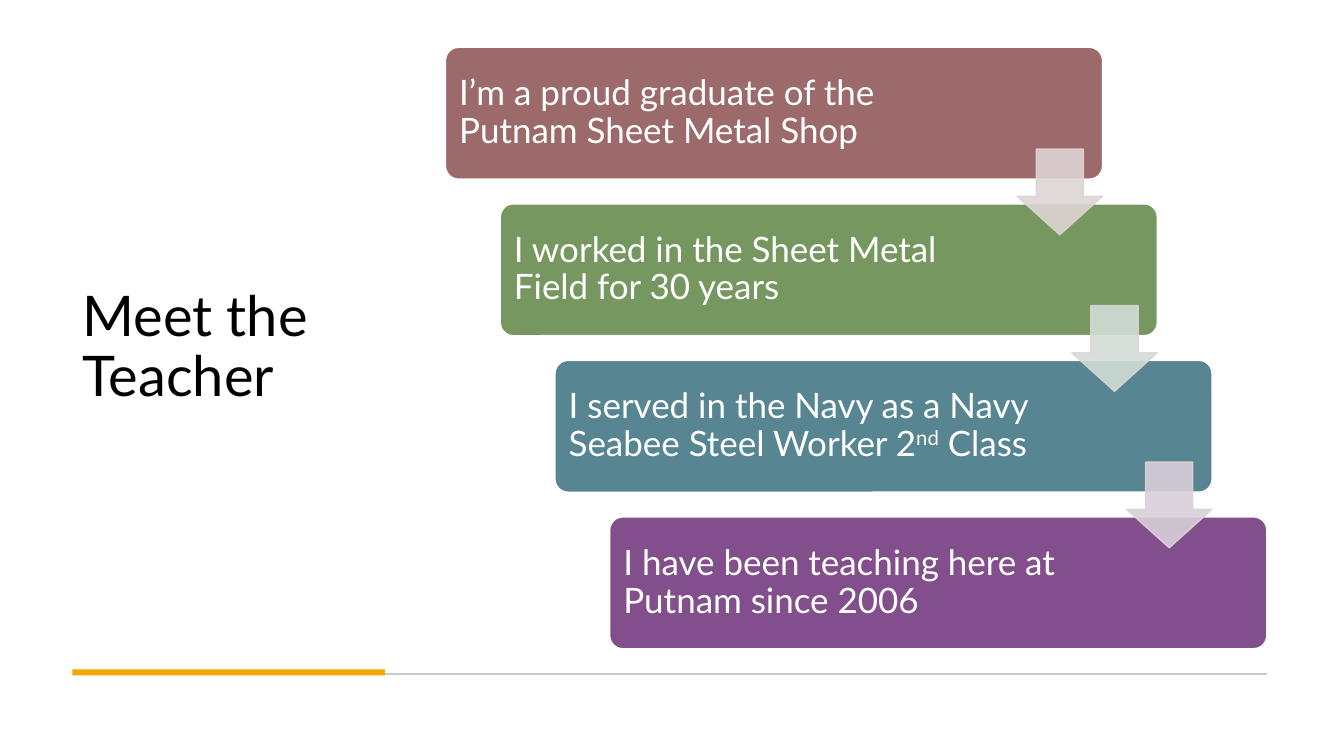
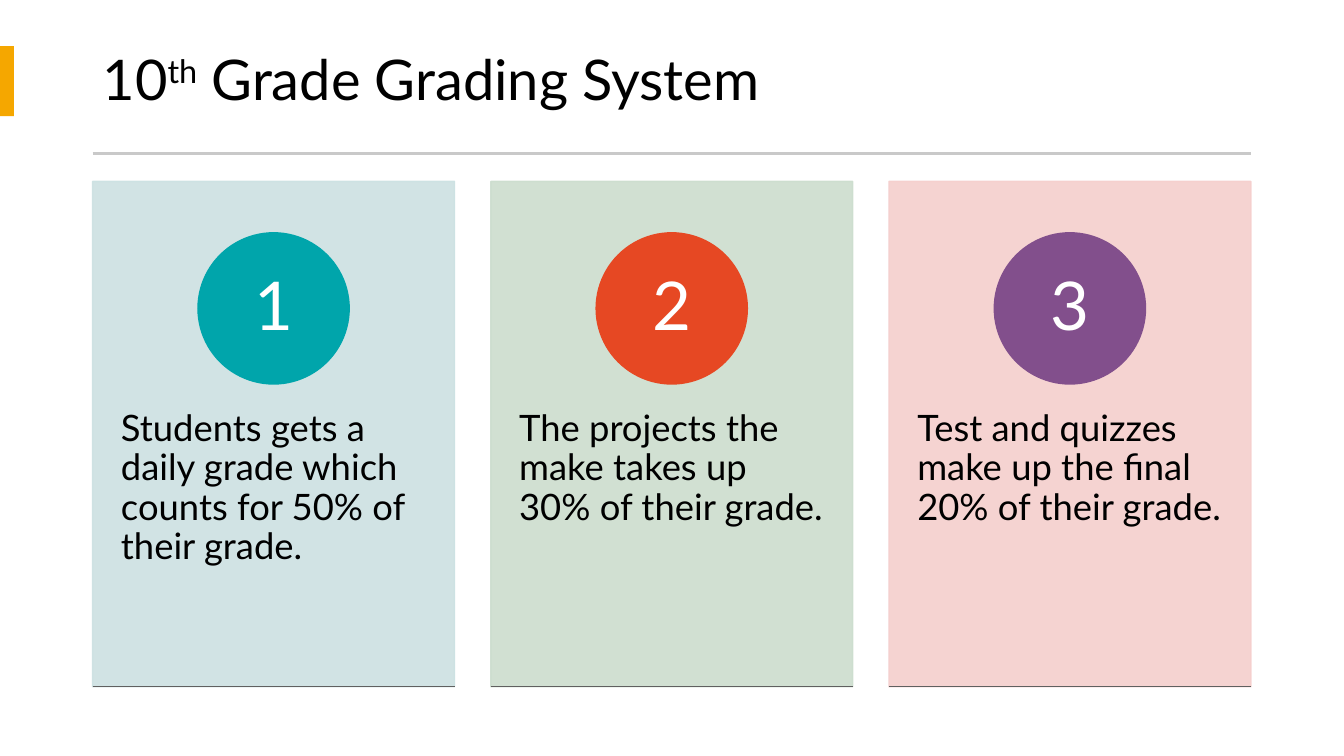
from lxml.etree import SubElement
from pptx import Presentation
from pptx.dml.color import RGBColor
from pptx.enum.shapes import MSO_CONNECTOR as Link, MSO_SHAPE as Kind
from pptx.enum.text import MSO_ANCHOR as Anchor, MSO_AUTO_SIZE as Fit, PP_ALIGN as Align
from pptx.oxml.ns import qn
from pptx.util import Pt

# Shared style
FONT = "Lato"
BLACK = RGBColor(0x00, 0x00, 0x00)
WHITE = RGBColor(0xFF, 0xFF, 0xFF)
GOLD = RGBColor(0xF5, 0xA7, 0x00)
GREY = RGBColor(0xC9, 0xC9, 0xC9)
DARK = RGBColor(0x60, 0x60, 0x60)
ROSE = RGBColor(0x9C, 0x6A, 0x6A)
GREEN = RGBColor(0x76, 0x98, 0x60)
STEEL = RGBColor(0x57, 0x85, 0x92)
PLUM = RGBColor(0x82, 0x4F, 0x8C)
TEAL = RGBColor(0x00, 0xA5, 0xAB)
RED = RGBColor(0xE6, 0x48, 0x23)
PALE_ROSE = RGBColor(0xDE, 0xD4, 0xD4)
PALE_GREEN = RGBColor(0xD2, 0xDC, 0xD6)
PALE_PLUM = RGBColor(0xD8, 0xD0, 0xDA)
ICE = RGBColor(0xCC, 0xE1, 0xE2)
MINT = RGBColor(0xCC, 0xDD, 0xCE)
PINK = RGBColor(0xF5, 0xCF, 0xCD)


def write(shape, text, size=26, color=BLACK, align=Align.LEFT,
          anchor=Anchor.MIDDLE, pad=(7.2, 3.6, 7.2, 3.6)):
    """Fill a shape with text; parts between ^ marks are superscript."""
    frame = shape.text_frame
    frame.word_wrap = True
    frame.auto_size = Fit.NONE
    frame.vertical_anchor = anchor
    frame.margin_left, frame.margin_top, frame.margin_right, frame.margin_bottom = map(Pt, pad)
    para = frame.paragraphs[0]
    para.alignment = align
    para.line_spacing = 0.9
    for i, part in enumerate(text.split("^")):
        run = para.add_run()
        run.text = part
        font = run.font
        font.name, font.size = FONT, Pt(size)
        font.color.rgb = color
        if i % 2:
            run.font._element.set("baseline", "30000")


class Deck:
    def __init__(self):
        self.show = Presentation()
        self.show.slide_width, self.show.slide_height = Pt(960), Pt(540)
        self.page = None

    def start(self, title, *box):
        self.page = self.show.slides.add_slide(self.show.slide_layouts[5])
        head = self.page.shapes.title
        head.left, head.top, head.width, head.height = map(Pt, box)
        write(head, title, size=40)

    def shape(self, kind, box, fill, line=None, adj=(), alpha=None):
        item = self.page.shapes.add_shape(kind, *map(Pt, box))
        item.shadow.inherit = False
        item.fill.solid()
        item.fill.fore_color.rgb = fill
        if line is None:
            item.line.fill.background()
        else:
            item.line.color.rgb = line
            item.line.width = Pt(1)
        for i, value in enumerate(adj):
            item.adjustments[i] = value
        if alpha:
            for color in list(item.element.spPr.iter(qn("a:srgbClr"))):
                SubElement(color, qn("a:alpha")).set("val", str(alpha * 1000))
        return item

    def rule(self, left, top, width, color=GREY, weight=1.5):
        line = self.page.shapes.add_connector(
            Link.STRAIGHT, Pt(left), Pt(top), Pt(left + width), Pt(top))
        line.line.color.rgb = color
        line.line.width = Pt(weight)
        SubElement(line.element.spPr, qn("a:effectLst"))

    def accent(self, *box):
        self.shape(Kind.RECTANGLE, box, GOLD)


def teacher(deck):
    deck.start("Meet the Teacher", 51.8, 33.8, 223.2, 430)
    deck.rule(51.8, 481.7, 853.2)
    deck.accent(51.8, 478.1, 223.2, 4.3)

    # Staircase of cards
    left, top, wide, high = 318.2, 33.8, 469.4, 94.2
    over, down, size = 39.1, 111.8, 61.2
    steps = [
        ("I’m a proud graduate of the Putnam Sheet Metal Shop", ROSE),
        ("I worked in the Sheet Metal Field for 30 years", GREEN),
        ("I served in the Navy as a Navy Seabee Steel Worker 2^nd^ Class", STEEL),
        ("I have been teaching here at Putnam since 2006", PLUM),
    ]
    for i, (text, fill) in enumerate(steps):
        box = left + i * over, top + i * down, wide, high
        card = deck.shape(Kind.ROUNDED_RECTANGLE, box, fill, line=WHITE, adj=[0.1])
        write(card, text, size=25, color=WHITE, pad=(7.2, 7.2, 112, 7.2))

    # Arrows over the right ends of the cards
    for i, fill in enumerate([PALE_ROSE, PALE_GREEN, PALE_PLUM]):
        box = left + wide - size + i * over, top + 72.7 + i * down, size, size
        deck.shape(Kind.DOWN_ARROW, box, fill, line=PALE_ROSE, adj=[0.55, 0.45], alpha=90)


def grading(deck):
    deck.start("10^th^ Grade Grading System", 66.2, 19.4, 827.3, 79.2)
    deck.accent(0, 33, 10, 50)
    deck.rule(66.2, 109.7, 827.3)

    # Three numbered panels
    top, wide, high, disc = 129.6, 258.5, 361, 108
    parts = [
        ("Students gets a daily grade which counts for 50% of their grade.", ICE, TEAL),
        ("The projects the make takes up 30% of their grade.", MINT, RED),
        ("Test and quizzes make up the final 20% of their grade.", PINK, PLUM),
    ]
    for i, (text, pale, bold) in enumerate(parts):
        left = 66.2 + i * 284.4
        panel = deck.shape(Kind.RECTANGLE, (left, top, wide, high), pale, line=pale, alpha=90)
        write(panel, text, anchor=Anchor.TOP, pad=(20.2, 163.4, 20.2, 20))
        spot = left + (wide - disc) / 2, top + 36.7, disc, disc
        badge = deck.shape(Kind.OVAL, spot, bold, line=bold)
        write(badge, str(i + 1), size=48, color=WHITE, align=Align.CENTER, pad=(0, 0, 0, 0))
        deck.rule(left, top + high, wide, color=DARK, weight=0.75)


def main():
    deck = Deck()
    teacher(deck)
    grading(deck)
    deck.show.save("out.pptx")


if __name__ == "__main__":
    main()
